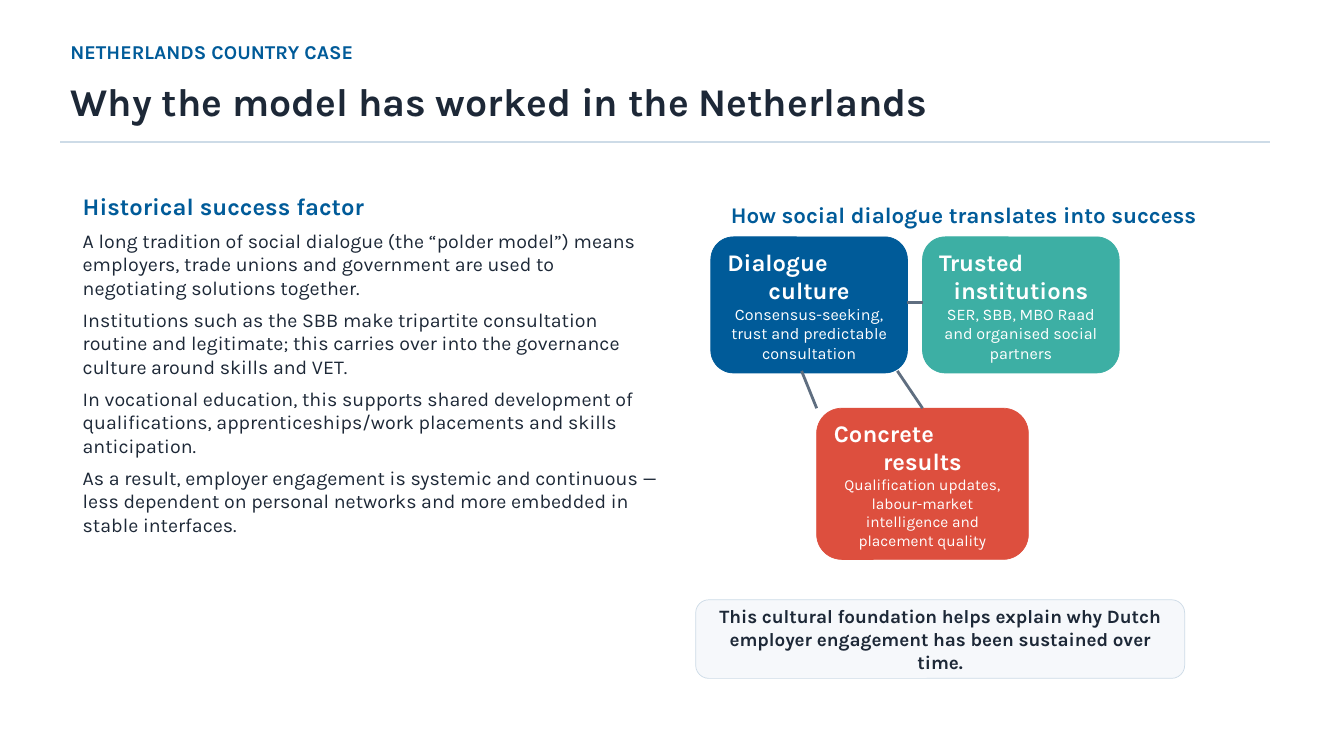
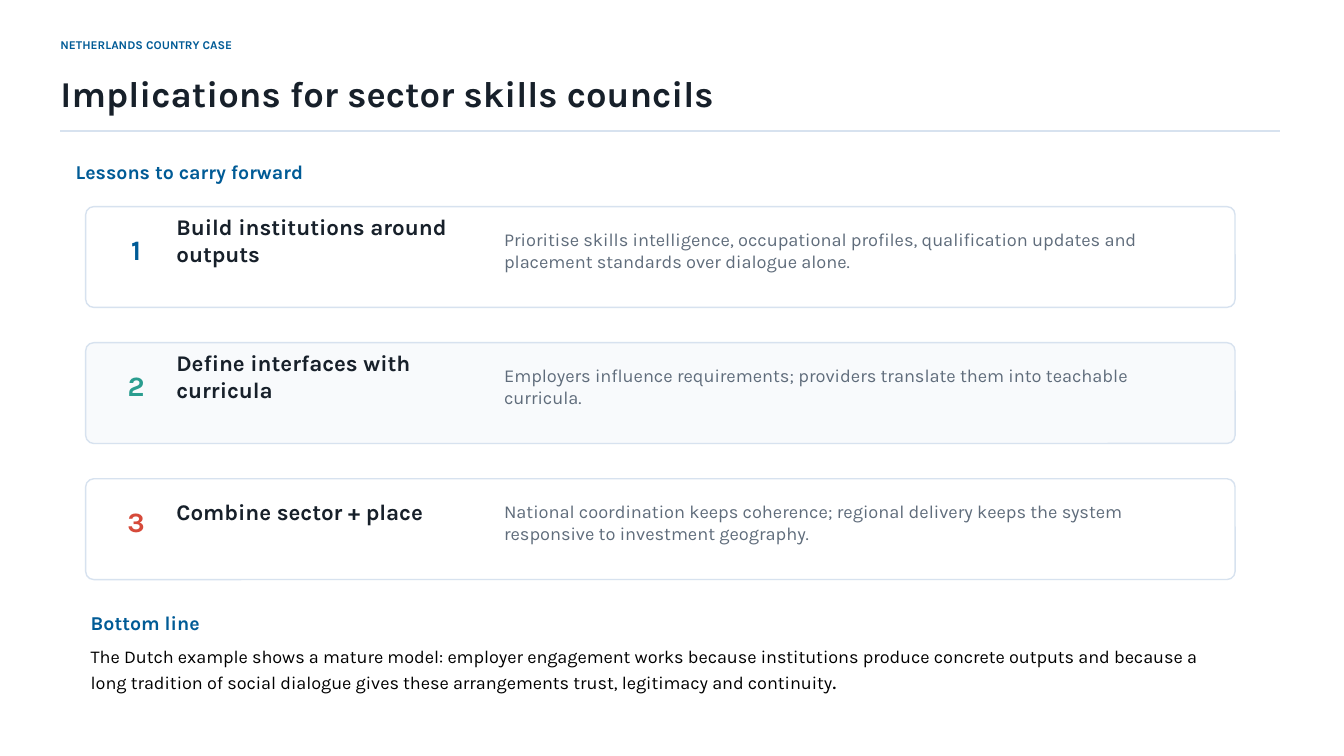
from lxml.etree import SubElement
from pptx import Presentation
from pptx.dml.color import RGBColor
from pptx.enum.shapes import MSO_CONNECTOR, MSO_SHAPE
from pptx.enum.text import MSO_ANCHOR, MSO_AUTO_SIZE, PP_ALIGN
from pptx.oxml.ns import qn
from pptx.util import Emu, Pt

SCALE = 9144  # EMU per px, 100 px to the inch
FONT = "Karla"
KICKER = "NETHERLANDS COUNTRY CASE"

WHITE = RGBColor(0xFF, 0xFF, 0xFF)
BLACK = RGBColor(0, 0, 0)
BLUE = RGBColor(0x00, 0x5B, 0x99)
TEAL = RGBColor(0x3D, 0xAF, 0xA4)
RED = RGBColor(0xDD, 0x4F, 0x3E)
INK = RGBColor(0x1D, 0x28, 0x37)
SLATE = RGBColor(0x5F, 0x6E, 0x80)
BORDER = RGBColor(0xCD, 0xDB, 0xE7)
PALE = RGBColor(0xF6, 0xF8, 0xFB)

LESSON_BLUE = RGBColor(0x00, 0x5B, 0x96)
LESSON_TEAL = RGBColor(0x2A, 0x9D, 0x8F)
LESSON_RED = RGBColor(0xD6, 0x4A, 0x3A)
LESSON_INK = RGBColor(0x17, 0x20, 0x2A)
LESSON_GREY = RGBColor(0x5F, 0x6C, 0x7B)
LESSON_BORDER = RGBColor(0xD7, 0xE2, 0xEF)
LESSON_PALE = RGBColor(0xF8, 0xFA, 0xFC)

LEFT, CENTER = PP_ALIGN.LEFT, PP_ALIGN.CENTER
TOP, MIDDLE = MSO_ANCHOR.TOP, MSO_ANCHOR.MIDDLE

HISTORY = [
    "A long tradition of social dialogue (the “polder model”) means employers, "
    "trade unions and government are used to negotiating solutions together.",
    "Institutions such as the SBB make tripartite consultation routine and legitimate; "
    "this carries over into the governance culture around skills and VET.",
    "In vocational education, this supports shared development of qualifications, "
    "apprenticeships/work placements and skills anticipation.",
    "As a result, employer engagement is systemic and continuous — less dependent on "
    "personal networks and more embedded in stable interfaces.",
]
# offset box, colour, two title lines, detail, detail size
FACTORS = [
    ((0, 0, 195, 135), BLUE, ("Dialogue", "culture"),
     "Consensus-seeking, trust and predictable consultation", 11.5),
    ((210, 0, 195, 135), TEAL, ("Trusted", "institutions"),
     "SER, SBB, MBO Raad and organised social partners", 11.5),
    ((105, 170, 210, 150), RED, ("Concrete", "results"),
     "Qualification updates, labour-market intelligence and placement quality", 11),
]
FACTOR_LINKS = [((195, 65), (210, 65)), ((185, 133), (210, 170)), ((105, 170), (90, 133))]
LESSONS = [
    (LESSON_BLUE, WHITE, "Build institutions around outputs",
     "Prioritise skills intelligence, occupational profiles, qualification updates "
     "and placement standards over dialogue alone."),
    (LESSON_TEAL, LESSON_PALE, "Define interfaces with curricula",
     "Employers influence requirements; providers translate them into teachable curricula."),
    (LESSON_RED, WHITE, "Combine sector + place",
     "National coordination keeps coherence; regional delivery keeps the system "
     "responsive to investment geography."),
]


def px(*values):
    return [Emu(v * SCALE) for v in values]


def set_all(obj, values):
    for name, value in values.items():
        setattr(obj, name, value)


def para(*runs, align=LEFT, before=0):
    return runs, {"alignment": align, "space_before": Pt(before)}


def run(text, size, color, bold=False):
    return text, {"name": FONT, "size": Pt(size), "bold": bold}, color


def write(sp, paras, anchor=TOP, inset=None):
    """Fill a shape with paragraphs; inset is one margin in px for all sides."""
    tf = sp.text_frame
    set_all(tf, {"word_wrap": True, "auto_size": MSO_AUTO_SIZE.NONE,
                 "vertical_anchor": anchor})
    if inset is not None:
        sides = ("left", "top", "right", "bottom")
        set_all(tf, {f"margin_{side}": Emu(inset * SCALE) for side in sides})
    for i, (runs, layout) in enumerate(paras):
        p = tf.add_paragraph() if i else tf.paragraphs[0]
        if sp.is_placeholder:
            pPr = p._p.get_or_add_pPr()
            set_all_xml = {"marL": "0", "indent": "0"}
            for name, value in set_all_xml.items():
                pPr.set(name, value)
            SubElement(pPr, qn("a:buNone"))
        set_all(p, layout)
        for text, font, color in runs:
            r = p.add_run()
            r.text = text
            set_all(r.font, font)
            r.font.color.rgb = color


def add_text(s, box, *paras, anchor=TOP, inset=None):
    write(s.shapes.add_textbox(*px(*box)), paras, anchor, inset)


def fill_placeholder(sp, box, *paras, anchor=TOP, inset=None):
    set_all(sp, dict(zip(("left", "top", "width", "height"), px(*box))))
    write(sp, paras, anchor, inset)


def add_card(s, box, fill, line, width, *paras):
    sp = s.shapes.add_shape(MSO_SHAPE.ROUNDED_RECTANGLE, *px(*box))
    sp.shadow.inherit = False
    sp.fill.solid()
    sp.fill.fore_color.rgb = fill
    sp.line.color.rgb = line
    sp.line.width = Pt(width)
    if paras:
        write(sp, paras, MIDDLE)
    return sp


def add_line(s, start, end, color, width):
    c = s.shapes.add_connector(MSO_CONNECTOR.STRAIGHT, *px(*start, *end))
    c.line.color.rgb = color
    c.line.width = Pt(width)
    SubElement(c._element.spPr, qn("a:effectLst"))


def header(s, title, kicker_box, title_box, rule, sizes, colors, **frame):
    """Kicker, title and rule; rule is (y, right, width in points)."""
    kicker_color, title_color, rule_color = colors
    add_text(s, kicker_box, para(run(KICKER, sizes[0], kicker_color, True)), **frame)
    fill_placeholder(s.shapes.title, title_box,
                     para(run(title, sizes[1], title_color, True)), **frame)
    y, right, width = rule
    add_line(s, (60, y), (right, y), rule_color, width)


def factor_diagram(s, x, y):
    for (dx, dy, w, h), color, (first, second), detail, size in FACTORS:
        add_card(s, (x + dx, y + dy, w, h), color, color, 0.5,
                 para(run(first, 17, WHITE, True)),
                 para(run(second, 17, WHITE, True), align=CENTER),
                 para(run(detail, size, WHITE), align=CENTER))
    for (x1, y1), (x2, y2) in FACTOR_LINKS:
        add_line(s, (x + x1, y + y1), (x + x2, y + y2), SLATE, 2)


def lesson_row(s, x, y, number, color, fill, title, detail):
    card = add_card(s, (x, y, 1140, 100), fill, LESSON_BORDER, 1)
    card.adjustments[0] = 0.08
    parts = [
        ((30, 25, 40, 35), para(run(str(number), 20, color, True), align=CENTER)),
        ((90, 18, 310, 30), para(run(title, 16, LESSON_INK, True))),
        ((415, 18, 670, 50), para(run(detail, 13, LESSON_GREY))),
    ]
    for (dx, dy, w, h), p in parts:
        add_text(s, (x + dx, y + dy, w, h), p, anchor=MIDDLE, inset=0)


def success_slide(prs):
    s = prs.slides.add_slide(prs.slide_layouts[1])
    header(s, "Why the model has worked in the Netherlands",
           (60, 35, 400, 35), (60, 72, 1200, 75), (141, 1260, 1.44),
           (14, 28), (BLUE, INK, BORDER))
    fill_placeholder(s.placeholders[1], (72, 185, 595, 355),
                     para(run("Historical success factor", 17, BLUE, True)),
                     *(para(run(text, 14, INK), before=6) for text in HISTORY))
    add_text(s, (715, 195, 510, 45),
             para(run("How social dialogue translates into success", 16, BLUE, True)))
    factor_diagram(s, 705, 235)
    add_card(s, (690, 595, 485, 78), PALE, BORDER, 0.5,
             para(run("This cultural foundation helps explain why Dutch employer "
                      "engagement has been sustained over time.", 13.5, INK, True),
                  align=CENTER))


def lessons_slide(prs):
    s = prs.slides.add_slide(prs.slide_layouts[5])
    frame = {"anchor": MIDDLE, "inset": 0}
    header(s, "Implications for sector skills councils",
           (60, 32, 480, 25), (60, 65, 980, 55), (130, 1270, 1),
           (8.5, 26), (LESSON_BLUE, LESSON_INK, LESSON_BORDER), **frame)
    add_text(s, (75, 156, 570, 28),
             para(run("Lessons to carry forward", 14, LESSON_BLUE, True)), **frame)
    for i, lesson in enumerate(LESSONS):
        lesson_row(s, 85, 205 + 135 * i, i + 1, *lesson)
    add_text(s, (90, 605, 150, 25),
             para(run("Bottom line", 14, LESSON_BLUE, True)), **frame)
    add_text(s, (90, 642, 1100, 45),
             para(run("The Dutch example shows a mature model: employer engagement works "
                      "because institutions produce concrete outputs and because a long "
                      "tradition of social dialogue gives these arrangements trust, "
                      "legitimacy and continuity", 12.9, BLACK),
                  run(".", 16.6, BLACK)), **frame)


def main():
    prs = Presentation()
    prs.slide_width, prs.slide_height = px(1333, 750)
    success_slide(prs)
    lessons_slide(prs)
    prs.save("out.pptx")


if __name__ == "__main__":
    main()
